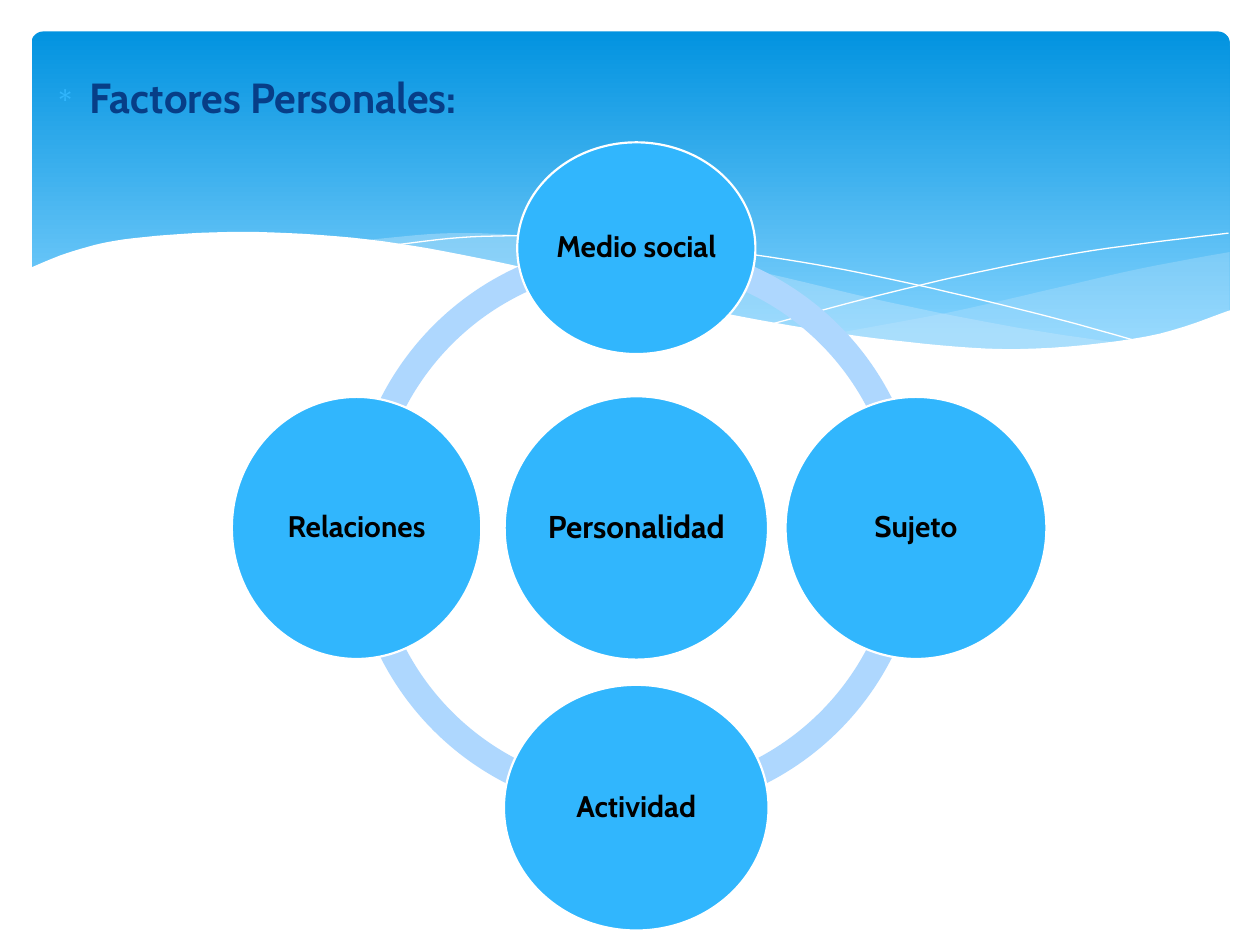
"""Slide with a ring of four personal factors around personality, under a wavy banner."""
from itertools import pairwise

from lxml import etree
from pptx import Presentation
from pptx.dml.color import RGBColor
from pptx.enum.shapes import MSO_SHAPE
from pptx.enum.text import MSO_ANCHOR, PP_ALIGN
from pptx.oxml.ns import qn
from pptx.util import Inches, Pt

OVAL, ARC, ROUNDED = MSO_SHAPE.OVAL, MSO_SHAPE.BLOCK_ARC, MSO_SHAPE.ROUNDED_RECTANGLE
LEFT, CENTER = PP_ALIGN.LEFT, PP_ALIGN.CENTER
TOP, MIDDLE = MSO_ANCHOR.TOP, MSO_ANCHOR.MIDDLE
WHITE = RGBColor(0xFF, 0xFF, 0xFF)
BLACK = RGBColor(0, 0, 0)
NAVY = RGBColor(0x07, 0x3E, 0x87)
SKY = RGBColor(0x31, 0xB6, 0xFD)
RING = RGBColor(0xAE, 0xD7, 0xFE)
BANNER_TOP = RGBColor(0x02, 0x93, 0xE0)
BANNER_END = RGBColor(0x83, 0xD3, 0xFE)
WAVE = RGBColor(0xC6, 0xE7, 0xFC)

prs = Presentation()
prs.slide_width, prs.slide_height = Inches(10), Inches(7.5)
COL = prs.slide_width / 10
UNITS = 1000
STEPS = 8
s = prs.slides.add_slide(prs.slide_layouts[5])


def add_text(sp, text, size=17, color=BLACK, align=CENTER, anchor=MIDDLE, wrap=False):
    tf = sp.text_frame
    tf.word_wrap, tf.vertical_anchor = wrap, anchor
    p = tf.paragraphs[0]
    p.alignment = align
    r = p.add_run()
    r.text = text
    r.font.name, r.font.size, r.font.bold = "Cabin", Pt(size), True
    r.font.color.rgb = color
    return p


def add_curve(*edges, fill=None, alpha=100):
    """Draw smooth Catmull-Rom edges through their knots, meeting at corners."""
    points = []
    for knots in edges:
        points.append(knots[0])
        padded = [knots[0], *knots, knots[-1]]
        for i, (b, c) in enumerate(pairwise(knots)):
            a, d = padded[i], padded[i + 3]
            for t in (n / STEPS for n in range(1, STEPS + 1)):
                points.append([
                    (2 * q + (r - p) * t + (2 * p - 5 * q + 4 * r - u) * t ** 2
                     + (3 * q - p - 3 * r + u) * t ** 3) / 2
                    for p, q, r, u in zip(a, b, c, d)])
    points = [(round(x * UNITS), round(y * UNITS)) for x, y in points]
    fb = s.shapes.build_freeform(*points[0], scale=COL / UNITS)
    fb.add_line_segments(points[1:], close=fill is not None)
    sp = fb.convert_to_shape()
    sp.shadow.inherit = False
    if fill is None:
        sp.fill.background()
        sp.line.color.rgb, sp.line.width = WHITE, Pt(0)
    else:
        sp.line.fill.background()
        sp.fill.solid()
        sp.fill.fore_color.rgb = fill
        clr = sp._element.spPr.find(".//" + qn("a:srgbClr"))
        etree.SubElement(clr, qn("a:alpha")).set("val", str(alpha * 1000))


banner = s.shapes.add_shape(ROUNDED, *(int(n * COL) for n in (0.25, 0.25, 9.51, 2.7)))
banner.adjustments[0] = 0.034
banner.shadow.inherit = False
banner.line.fill.background()
banner.fill.gradient()
banner.fill.gradient_angle = 270
for stop, pos, color in zip(banner.fill.gradient_stops, (0, 0.9), (BANNER_TOP, BANNER_END)):
    stop.position, stop.color.rgb = pos, color

right_crest = [(9.76, 2), (9.06, 2.13), (8.32, 2.3), (7.53, 2.48), (6.61, 2.65)]
right_trough = [(6.61, 2.65), (7.32, 2.74), (8.03, 2.78), (8.72, 2.74), (9.28, 2.63), (9.76, 2.47)]
long_crest = [(8.93, 2.73), (8.07, 2.6), (7.06, 2.4), (6.13, 2.18),
              (5.28, 2), (4.42, 1.89), (3.61, 1.85), (2.86, 1.91)]
long_trough = [(2.86, 1.91), (3.62, 2.03), (4.49, 2.22), (5.3, 2.4),
               (6.18, 2.58), (7.09, 2.72), (7.96, 2.78), (8.93, 2.73)]
falling_line = [(3.09, 1.95), (3.74, 1.88), (4.5, 1.88), (5.33, 1.94),
                (6.36, 2.08), (7.27, 2.26), (8.31, 2.51), (9.07, 2.72)]
rising_line = [(6.13, 2.57), (6.95, 2.35), (7.76, 2.16), (8.66, 1.99), (9.75, 1.85)]
page_edge = [(9.77, 2.46), (9.1, 2.67), (8.09, 2.77), (7.08, 2.7), (6.03, 2.54), (5.03, 2.33),
             (3.91, 2.07), (2.92, 1.9), (1.93, 1.84), (1.06, 1.89), (0.59, 1.99), (0.23, 2.13)]
page_base = [(0.23, 3.29), (9.77, 3.29)]

add_curve(right_crest, right_trough, fill=WAVE, alpha=29)
add_curve(long_crest, long_trough, fill=WAVE, alpha=40)
add_curve(falling_line)
add_curve(rising_line)
add_curve(page_edge, page_base, fill=WHITE)

title = s.shapes.title
title.left, title.top, title.width, title.height = (
    int(n * COL) for n in (0.28, 0.52, 8.78, 6.18))
p = add_text(title, "Factores Personales:", 24, NAVY, LEFT, TOP, True)
p.space_before = Pt(0)
pPr = p._p.get_or_add_pPr()
pPr.set("marL", str(Inches(0.33)))
pPr.set("indent", str(-Inches(0.27)))
bullet_color = etree.SubElement(pPr, qn("a:buClr"))
etree.SubElement(bullet_color, qn("a:srgbClr")).set("val", str(SKY))
etree.SubElement(pPr, qn("a:buSzPct")).set("val", "65000")
etree.SubElement(pPr, qn("a:buChar")).set("char", "∗")
s.shapes._spTree.append(title._element)

CX, CY, ORBIT, RING_SIZE = 5.05, 4.19, 2.22, 4.55
ANGLE_UNIT = 0.6
for start in (180, 90, 0, 270):
    sp = s.shapes.add_shape(ARC, *(int(n * COL) for n in (
        CX - RING_SIZE / 2, CY - RING_SIZE / 2, RING_SIZE, RING_SIZE)))
    end = (start + 90) % 360
    for i, value in enumerate((start * ANGLE_UNIT, end * ANGLE_UNIT, 0.046)):
        sp.adjustments[i] = value
    sp.shadow.inherit = False
    sp.fill.solid()
    sp.fill.fore_color.rgb = RING
    sp.line.fill.background()

for text, dx, dy, w, h, size in (
        ("Personalidad", 0, 0, 2.09, 2.09, 18),
        ("Medio social", 0, -1, 1.89, 1.68, 17),
        ("Sujeto", 1, 0, 2.07, 2.08, 17),
        ("Actividad", 0, 1, 2.1, 1.95, 17),
        ("Relaciones", -1, 0, 1.98, 2.08, 17)):
    x, y = CX + dx * ORBIT - w / 2, CY + dy * ORBIT - h / 2
    sp = s.shapes.add_shape(OVAL, *(int(n * COL) for n in (x, y, w, h)))
    sp.shadow.inherit = False
    sp.fill.solid()
    sp.fill.fore_color.rgb = SKY
    sp.line.color.rgb, sp.line.width = WHITE, Pt(1.25)
    tf = sp.text_frame
    tf.margin_left = tf.margin_right = tf.margin_top = tf.margin_bottom = Inches(0.02)
    add_text(sp, text, size).line_spacing = 0.9

prs.save("out.pptx")
